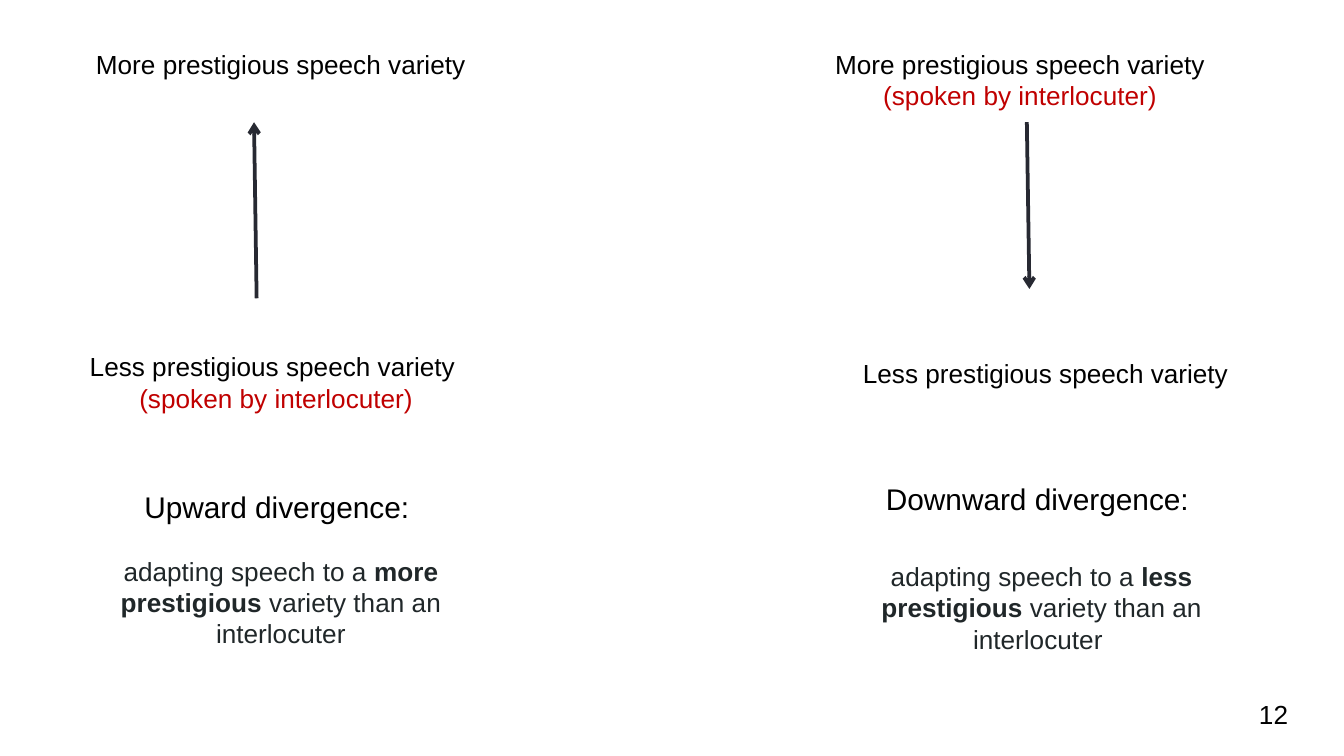
import pptx
import pptx.dml.color
import pptx.enum.shapes
import pptx.enum.text
import pptx.oxml.ns
import pptx.util
import lxml.etree

Pt = pptx.util.Pt
qn = pptx.oxml.ns.qn
RGBColor = pptx.dml.color.RGBColor
PP_ALIGN = pptx.enum.text.PP_ALIGN
MSO_ANCHOR = pptx.enum.text.MSO_ANCHOR

COLORS = {"text": "000000", "speaker": "C00000", "definition": "202729", "arrow": "272932"}

presentation = pptx.Presentation()
presentation.slide_width, presentation.slide_height = Pt(720), Pt(405)
slide = presentation.slides.add_slide(presentation.slide_layouts[6])


def add_text(box, paragraphs, size=14, align=PP_ALIGN.CENTER):
    shape = slide.shapes.add_textbox(*map(Pt, box))
    frame = shape.text_frame
    frame.word_wrap = True
    for index, (color, runs) in enumerate(paragraphs):
        paragraph = frame.paragraphs[0] if index == 0 else frame.add_paragraph()
        paragraph.alignment = align
        paragraph.font.name = "Arial"
        paragraph.font.size = Pt(size)
        paragraph.font.color.rgb = RGBColor.from_string(COLORS[color])
        for position, text in enumerate(runs):
            run = paragraph.add_run()
            run.text = text
            if position == 1:
                run.font.bold = True
    return frame


def add_arrow(start, end):
    connector = slide.shapes.add_connector(
        pptx.enum.shapes.MSO_CONNECTOR.STRAIGHT, *map(Pt, start + end))
    connector.line.color.rgb = RGBColor.from_string(COLORS["arrow"])
    connector.line.width = Pt(2)
    line = connector.line._get_or_add_ln()
    lxml.etree.SubElement(line, qn("a:tailEnd"), type="arrow")
    lxml.etree.SubElement(connector._element.spPr, qn("a:effectLst"))


more = ("text", ["More prestigious speech variety"])
less = ("text", ["Less prestigious speech variety"])
less_spaced = ("text", ["Less prestigious speech variety\u00a0".replace("\u00a0", " ")])
spoken = ("speaker", ["(spoken by interlocuter)"])

columns = [
    {
        "top": ((42.5, 22.3, 216, 24.5), [more]),
        "bottom": ((25.2, 184.3, 245.5, 41), [less_spaced, spoken]),
        "heading": ((40.3, 258.5, 216, 26.6), "Upward divergence:"),
        "definition": ((42.5, 293.8, 216, 58.3),
                       ["adapting speech to a ", "more prestigious", " variety than an interlocuter"]),
        "arrow": ((137.5, 159.8), (136.1, 65.5)),
    },
    {
        "top": ((438.5, 22.3, 216, 41), [more, spoken]),
        "bottom": ((452.2, 187.9, 216, 24.5), [less]),
        "heading": ((447.8, 254.2, 216, 26.6), "Downward divergence:"),
        "definition": ((450, 296.6, 216, 58.3),
                       ["adapting speech to a", " less prestigious", " variety than an interlocuter "]),
        "arrow": ((550.1, 65.5), (551.5, 154.8)),
    },
]

for column in columns:
    add_text(*column["top"])
    add_text(*column["bottom"])
    heading_box, heading = column["heading"]
    add_text(heading_box, [("text", [heading])], size=16)
    definition_box, definition = column["definition"]
    add_text(definition_box, [("definition", definition)])
    add_arrow(*column["arrow"])

number_frame = add_text((667.4, 367.2, 43.2, 31), [("text", ["12"])], align=PP_ALIGN.LEFT)
number_frame.vertical_anchor = MSO_ANCHOR.MIDDLE
number_frame.margin_left = number_frame.margin_right = Pt(7.2)
number_frame.margin_top = number_frame.margin_bottom = Pt(7.2)

presentation.save("out.pptx")
